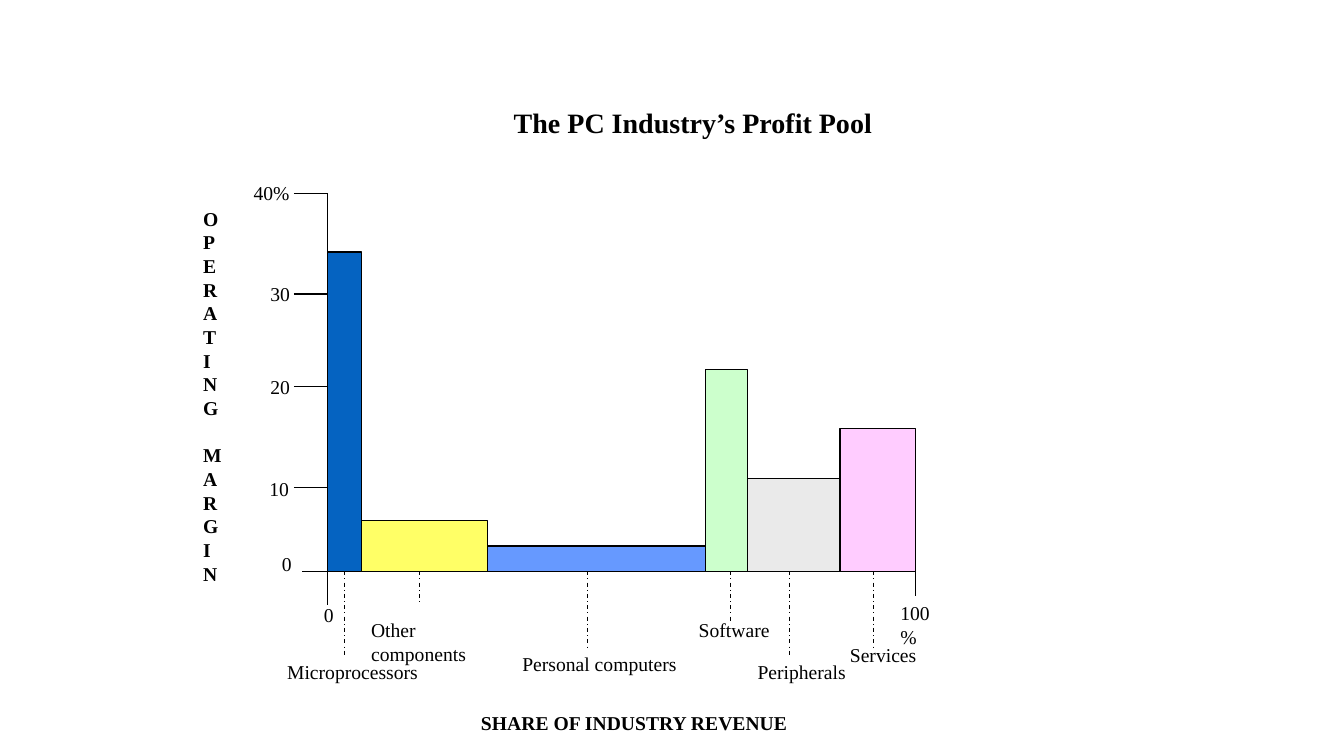
from pptx import Presentation
from pptx import util as u
from pptx.dml.color import RGBColor
from pptx.enum import dml, shapes, text
from pptx.oxml.ns import qn
from lxml import etree

PX = 9525  # 96 px to the inch
COLORS = {
    "ink": "000000", "blue": "0563C1", "yellow": "FFFF66", "sky": "6699FF",
    "green": "CCFFCC", "gray": "EAEAEA", "pink": "FFCCFF",
}
AXIS_X, AXIS_TOP, BASE_Y = 312, 184, 544

prs = Presentation()
prs.slide_width, prs.slide_height = 1280 * PX, 720 * PX
slide = prs.slides.add_slide(prs.slide_layouts[6])


def add_line(x1, y1, x2, y2, dash=None):
    line = slide.shapes.add_connector(
        shapes.MSO_CONNECTOR.STRAIGHT, x1 * PX, y1 * PX, x2 * PX, y2 * PX)
    line.line.color.rgb = RGBColor.from_string(COLORS["ink"])
    line.line.width = u.Pt(0.75)
    if dash:
        line.line.dash_style = dash
    etree.SubElement(line._element.spPr, qn("a:effectLst"))


def add_text(content, x, y, w, h=32, size=14, bold=False, center=False, wrap=False):
    """Add a text box with one paragraph per line and return its text frame."""
    tf = slide.shapes.add_textbox(x * PX, y * PX, w * PX, h * PX).text_frame
    tf.word_wrap = wrap
    tf.auto_size = text.MSO_AUTO_SIZE.SHAPE_TO_FIT_TEXT
    tf.text = content
    for p in tf.paragraphs:
        p.alignment = text.PP_ALIGN.CENTER if center else text.PP_ALIGN.LEFT
        for r in p.runs:
            r.font.name = "Times New Roman"
            r.font.size = u.Pt(size)
            r.font.bold = bold
            r.font.color.rgb = RGBColor.from_string(COLORS["ink"])
    return tf


add_text("The PC Industry’s Profit Pool", 328, 96, 664, 41,
         size=20, bold=True, center=True, wrap=True)

# Axes
add_line(AXIS_X, AXIS_TOP, AXIS_X, 576)
add_line(288, BASE_Y, 872, BASE_Y)
add_line(872, BASE_Y, 872, 568)

# Margin scale: label, tick y, label x, label y, label width
for label, tick_y, x, y, w in [
    ("40%", 184, 232, 168, 54),
    ("30", 280, 248, 264, 38),
    ("20", 368, 248, 352, 38),
    ("10", 464, 247, 449, 38),
]:
    add_line(280, tick_y, AXIS_X, tick_y)
    add_text(label, x, y, w)
add_text("0", 259, 521, 29)

# Revenue scale
add_text("0", 299, 569, 29)
add_text("100%", 848, 568, 62)

# Segments: name, colour, bar width, bar top, leader x and end, label x, y and width
segments = [
    ("Microprocessors", "blue", 32, 240, 328, 624, 264, 624, 144),
    ("Other components", "yellow", 120, 496, 400, 576, 344, 584, 156),
    ("Personal computers", "sky", 208, 520, 560, 616, 488, 616, 166),
    ("Software", "green", 40, 352, 696, 592, 656, 584, 91),
    ("Peripherals", "gray", 88, 456, 752, 624, 712, 624, 107),
    ("Services", "pink", 72, 408, 832, 616, 800, 608, 83),
]
left = AXIS_X
for name, color, width, top, leader_x, leader_end, x, y, w in segments:
    bar = slide.shapes.add_shape(
        shapes.MSO_SHAPE.RECTANGLE, left * PX, top * PX, width * PX, (BASE_Y - top) * PX)
    bar.shadow.inherit = False
    bar.fill.solid()
    bar.fill.fore_color.rgb = RGBColor.from_string(COLORS[color])
    bar.line.color.rgb = RGBColor.from_string(COLORS["ink"])
    bar.line.width = u.Pt(0.75)
    left += width
    add_line(leader_x, BASE_Y, leader_x, leader_end, dash=dml.MSO_LINE.DASH_DOT)
    add_text(name, x, y, w)

# Axis titles
add_text("SHARE OF INDUSTRY REVENUE", 432, 672, 344, bold=True, center=True, wrap=True)
first, second = "OPERATING", "MARGIN"
tf = add_text("\n".join(first + second), 184, 192, 56, 395, bold=True, wrap=True)
for p in tf.paragraphs:
    p.line_spacing = u.Pt(16.9)
tf.paragraphs[len(first)].space_before = u.Pt(16.9)

prs.save("out.pptx")
